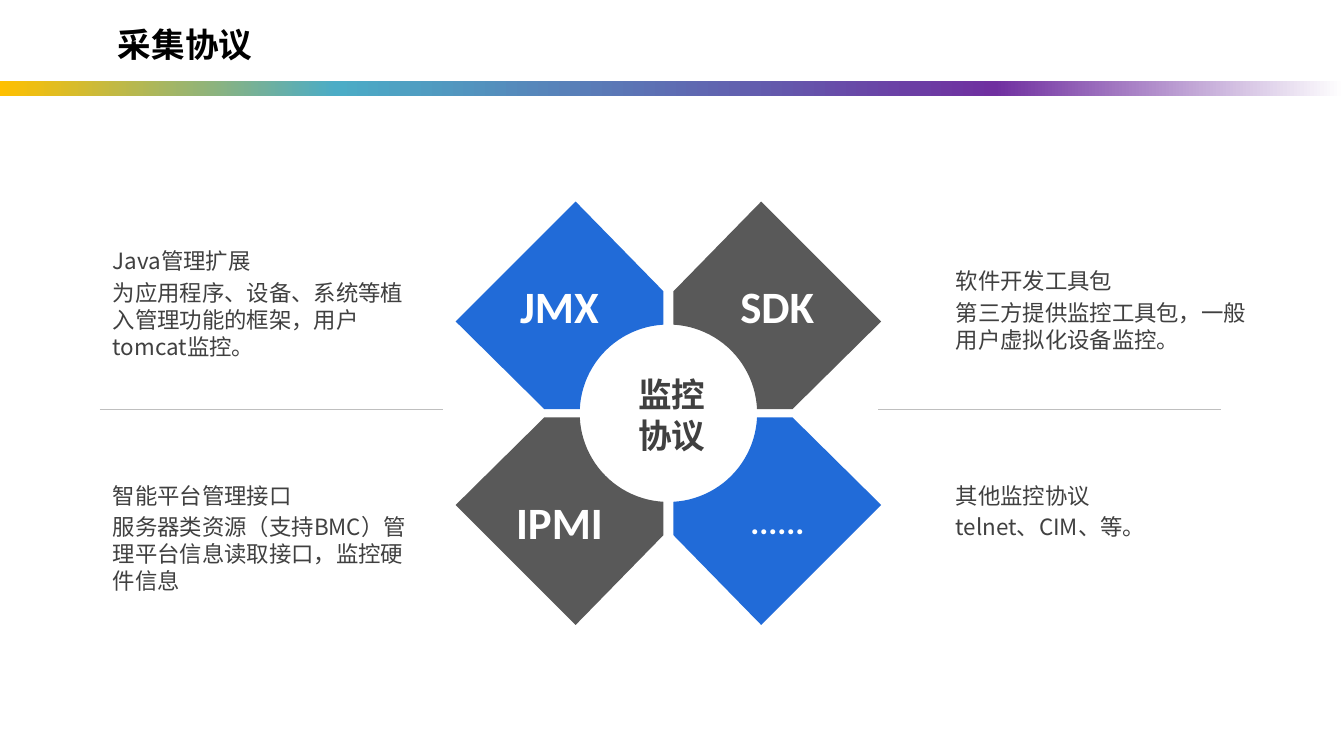
import math

import lxml.etree
import pptx
import pptx.dml.color
import pptx.enum.shapes
import pptx.enum.text
import pptx.oxml.ns
import pptx.util

Inches = pptx.util.Inches
Pt = pptx.util.Pt
RGBColor = pptx.dml.color.RGBColor
PP_ALIGN = pptx.enum.text.PP_ALIGN
MSO_ANCHOR = pptx.enum.text.MSO_ANCHOR
qn = pptx.oxml.ns.qn

BLACK = RGBColor(0x00, 0x00, 0x00)
WHITE = RGBColor(0xFF, 0xFF, 0xFF)
INK = RGBColor(0x40, 0x40, 0x40)
RULE = RGBColor(0xBF, 0xBF, 0xBF)
BLUE = RGBColor(0x21, 0x6B, 0xD8)
GREY = RGBColor(0x59, 0x59, 0x59)
BAND_STOPS = [
    (0, RGBColor(0xFF, 0xC0, 0x00)),
    (25, RGBColor(0x4B, 0xAC, 0xC6)),
    (74, RGBColor(0x70, 0x30, 0xA0)),
    (100, WHITE),
]
HAN_FONT = "Noto Sans CJK SC"
LATIN_FONT = "Calibri"

PETALS = [
    ("JMX", -1, -1, BLUE, 32),
    ("SDK", 1, -1, GREY, 32),
    ("IPMI", -1, 1, GREY, 32),
    ("......", 1, 1, BLUE, 24),
]
NOTES = [
    (0.99, 2.38, 1.31, ["Java管理扩展", "为应用程序、设备、系统等植入管理功能的框架，用户tomcat监控。"]),
    (9.35, 2.58, 0.9, ["软件开发工具包", "第三方提供监控工具包，一般用户虚拟化设备监控。"]),
    (0.99, 4.71, 0.9, ["智能平台管理接口", "服务器类资源（支持BMC）管理平台信息读取接口，监控硬件信息"]),
    (9.35, 4.71, 0.9, ["其他监控协议", "telnet、CIM、等。"]),
]


def write_text(frame, lines, size, color, font=HAN_FONT, bold=False,
               align=PP_ALIGN.LEFT, anchor=MSO_ANCHOR.TOP,
               margins=(0.1, 0.05), line_height=None, gap=0):
    frame.word_wrap = True
    frame.vertical_anchor = anchor
    frame.margin_left = frame.margin_right = Inches(margins[0])
    frame.margin_top = frame.margin_bottom = Inches(margins[1])
    for index, line in enumerate(lines):
        paragraph = frame.paragraphs[0] if index == 0 else frame.add_paragraph()
        paragraph.alignment = align
        if line_height:
            paragraph.line_spacing = Pt(line_height)
        if index and gap:
            paragraph.space_before = Pt(gap)
        run = paragraph.add_run()
        run.text = line
        run.font.size = Pt(size)
        run.font.bold = bold
        run.font.color.rgb = color
        run.font.name = font
        lxml.etree.SubElement(run.font._element, qn("a:ea"), typeface=font)


def add_text(slide, left, top, width, height, lines, **style):
    box = slide.shapes.add_textbox(
        Inches(left), Inches(top), Inches(width), Inches(height))
    write_text(box.text_frame, lines, **style)


def add_header(slide, left, top, width, height):
    band = slide.shapes.add_shape(
        pptx.enum.shapes.MSO_SHAPE.RECTANGLE,
        Inches(left), Inches(top + height - 0.15), Inches(width), Inches(0.15))
    band.shadow.inherit = False
    band.line.fill.background()
    band.fill.gradient()
    band.fill.gradient_angle = 0
    stops = band._element.spPr.find(".//" + qn("a:gsLst"))
    for stop in list(stops):
        stops.remove(stop)
    for percent, color in BAND_STOPS:
        stop = lxml.etree.SubElement(stops, qn("a:gs"), pos=str(percent * 1000))
        lxml.etree.SubElement(stop, qn("a:srgbClr"), val=str(color))
    add_text(slide, left + 1.07, top + 0.19, 9.62, 0.5, ["采集协议"],
             size=24, color=BLACK, bold=True, line_height=29)


def add_petal(slide, center_x, center_y, label, side, level, color, size):
    radius, half_gap_x, half_gap_y = 0.88, 0.05, 0.04
    start = math.asin(half_gap_y / radius)
    end = math.acos(half_gap_x / radius)
    steps = 24
    angles = [start + (end - start) * step / steps for step in range(steps + 1)]
    outline = [(half_gap_x, 1.21), (0.92, 2.1), (2.11, 0.91), (1.23, half_gap_y)]
    outline += [(radius * math.cos(a), radius * math.sin(a)) for a in angles]
    points = [(Inches(center_x + side * x), Inches(center_y + level * y))
              for x, y in outline]
    builder = slide.shapes.build_freeform(*points[0])
    builder.add_line_segments(points[1:], close=True)
    petal = builder.convert_to_shape()
    petal.shadow.inherit = False
    petal.fill.solid()
    petal.fill.fore_color.rgb = color
    petal.line.fill.background()
    write_text(petal.text_frame, [label], size=size, color=WHITE,
               font=LATIN_FONT, bold=True, align=PP_ALIGN.CENTER,
               anchor=MSO_ANCHOR.MIDDLE)


def add_flower(slide, left, top, width, height):
    center_x, center_y = left + width / 2, top + height / 2
    for petal in PETALS:
        add_petal(slide, center_x, center_y, *petal)
    add_text(slide, center_x - 0.4, center_y - 0.44, 1.18, 0.91,
             ["监控", "协议"], size=24, color=INK, bold=True, line_height=29)


def add_rule(slide, left, top, width):
    rule = slide.shapes.add_connector(
        pptx.enum.shapes.MSO_CONNECTOR.STRAIGHT,
        Inches(left), Inches(top), Inches(left + width), Inches(top))
    rule.line.color.rgb = RULE
    rule.line.width = Pt(0.5)
    lxml.etree.SubElement(rule._element.spPr, qn("a:effectLst"))


def add_note(slide, left, top, width, height, lines):
    add_text(slide, left, top, width, height, lines, size=16, color=INK,
             margins=(0.13, 0.07), line_height=19.3, gap=3.2)


def main():
    deck = pptx.Presentation()
    deck.slide_width = Inches(13.33)
    deck.slide_height = Inches(7.5)
    slide = deck.slides.add_slide(deck.slide_layouts[6])
    add_header(slide, 0, 0, 13.33, 0.95)
    add_flower(slide, 4.52, 2, 4.22, 4.2)
    for left in (0.99, 8.71):
        add_rule(slide, left, 4.06, 3.4)
    for left, top, height, lines in NOTES:
        add_note(slide, left, top, 3.27, height, lines)
    deck.save("out.pptx")


if __name__ == "__main__":
    main()
